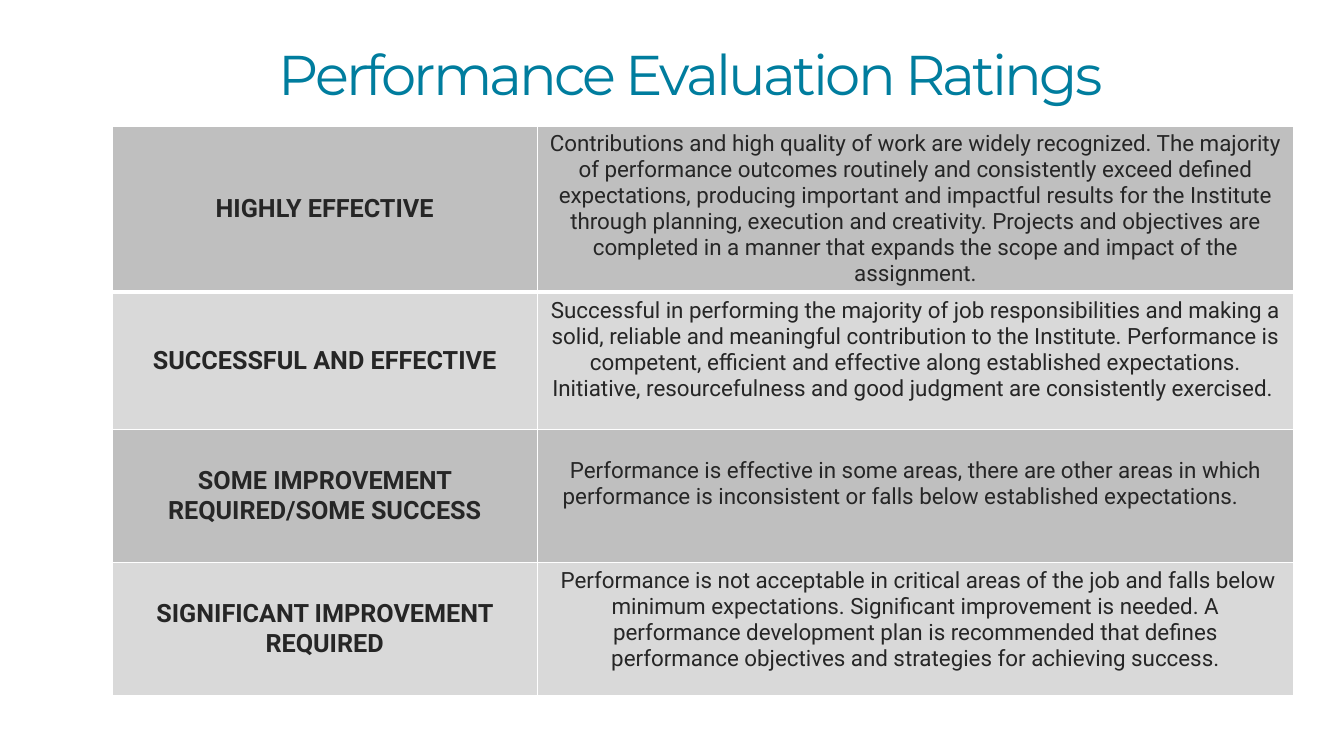
from lxml import etree
from pptx import Presentation
from pptx.dml.color import RGBColor
from pptx.enum.text import MSO_ANCHOR, MSO_AUTO_SIZE, PP_ALIGN
from pptx.oxml.ns import qn
from pptx.util import Pt

LEFT, CENTER = PP_ALIGN.LEFT, PP_ALIGN.CENTER
TOP, MIDDLE = MSO_ANCHOR.TOP, MSO_ANCHOR.MIDDLE
NO_AUTOFIT = MSO_AUTO_SIZE.NONE
TITLE_ONLY = 5

TEAL, INK, WHITE = "007D9E", "262626", "FFFFFF"
ROW_FILLS = ("BFBFBF", "D9D9D9")
COLUMN_SHARES = (0.36, 0.64)
ROW_HEIGHTS = (118, 98, 95, 95)
DESCRIPTION_TOPS = (3.6, 3.6, 20, 3.6)
THIN, THICK = 1, 3

RATINGS = (
    ("HIGHLY EFFECTIVE",
     "Contributions and high quality of work are widely recognized. The majority of "
     "performance outcomes routinely and consistently exceed defined expectations, "
     "producing important and impactful results for the Institute through planning, "
     "execution and creativity. Projects and objectives are completed in a manner that "
     "expands the scope and impact of the assignment."),
    ("SUCCESSFUL AND EFFECTIVE",
     "Successful in performing the majority of job responsibilities and making a solid, "
     "reliable and meaningful contribution to the Institute. Performance is competent, "
     "efficient and effective along established expectations. Initiative, "
     "resourcefulness and good judgment are consistently exercised. "),
    ("SOME IMPROVEMENT REQUIRED/SOME SUCCESS",
     "Performance is effective in some areas, there are other areas in which performance "
     "is inconsistent or falls below established expectations.\t"),
    ("SIGNIFICANT IMPROVEMENT REQUIRED",
     " Performance is not acceptable in critical areas of the job and falls below minimum "
     "expectations. Significant improvement is needed. A performance development plan is "
     "recommended that defines performance objectives and strategies for achieving "
     "success."),
)


def color(value):
    """Return the colour for a hex string."""
    return RGBColor.from_string(value)


def write_text(frame, text, *, size, font="Roboto", fill=INK, bold=False,
               align=CENTER, line_spacing=None, tracking=None):
    """Write one formatted paragraph into a text frame."""
    paragraph = frame.paragraphs[0]
    paragraph.alignment = align
    if line_spacing:
        paragraph.line_spacing = line_spacing
    run = paragraph.add_run()
    run.text = text
    run.font.size = Pt(size)
    run.font.name = font
    run.font.bold = bold
    run.font.color.rgb = color(fill)
    if tracking:
        run.font._element.set("spc", str(round(tracking * 100)))


def set_borders(cell, top, bottom):
    """Draw white borders on the four sides of a cell."""
    properties = cell._tc.get_or_add_tcPr()
    for tag, width in (("a:lnL", THIN), ("a:lnR", THIN), ("a:lnT", top), ("a:lnB", bottom)):
        line = etree.SubElement(properties, qn(tag), w=str(Pt(width)))
        solid = etree.SubElement(line, qn("a:solidFill"))
        etree.SubElement(solid, qn("a:srgbClr"), val=WHITE)


def add_title(slide, text, left, top, width, height):
    """Place and format the slide title."""
    title = slide.shapes.title
    title.left, title.top, title.width, title.height = map(Pt, (left, top, width, height))
    frame = title.text_frame
    frame.word_wrap = True
    frame.auto_size = NO_AUTOFIT
    frame.vertical_anchor = MIDDLE
    write_text(frame, text, size=40, font="Montserrat", fill=TEAL, align=LEFT,
               line_spacing=0.9, tracking=-2)


def add_ratings_table(slide, left, top, width):
    """Add the table of ratings and their descriptions."""
    frame = slide.shapes.add_table(len(RATINGS), len(COLUMN_SHARES), Pt(left), Pt(top),
                                   Pt(width), Pt(sum(ROW_HEIGHTS)))
    table = frame.table
    for column, share in zip(table.columns, COLUMN_SHARES):
        column.width = Pt(width * share)
    for index, (rating, description) in enumerate(RATINGS):
        table.rows[index].height = Pt(ROW_HEIGHTS[index])
        label, detail = table.cell(index, 0), table.cell(index, 1)
        for cell in (label, detail):
            set_borders(cell, THICK if index == 1 else THIN, THICK if index == 0 else THIN)
            cell.fill.solid()
            cell.fill.fore_color.rgb = color(ROW_FILLS[index % 2])
        label.vertical_anchor = MIDDLE
        write_text(label.text_frame, rating, size=18, bold=True)
        detail.vertical_anchor = TOP
        detail.margin_top = Pt(DESCRIPTION_TOPS[index])
        write_text(detail.text_frame, description, size=16)


def main():
    """Build and save the presentation."""
    presentation = Presentation()
    presentation.slide_width, presentation.slide_height = Pt(960), Pt(540)
    slide = presentation.slides.add_slide(presentation.slide_layouts[TITLE_ONLY])
    add_title(slide, "Performance Evaluation Ratings", 192, 0, 750, 110)
    add_ratings_table(slide, 80, 90, 844)
    presentation.save("out.pptx")


if __name__ == "__main__":
    main()
